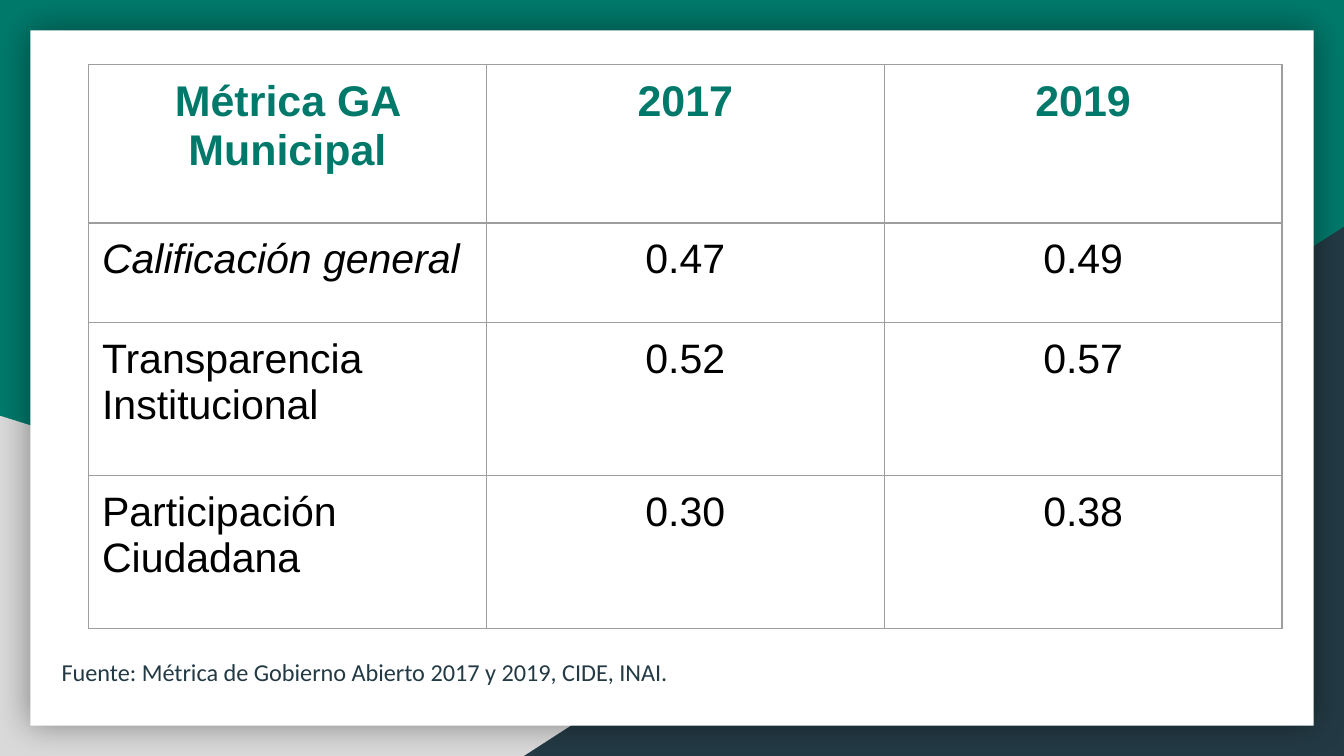
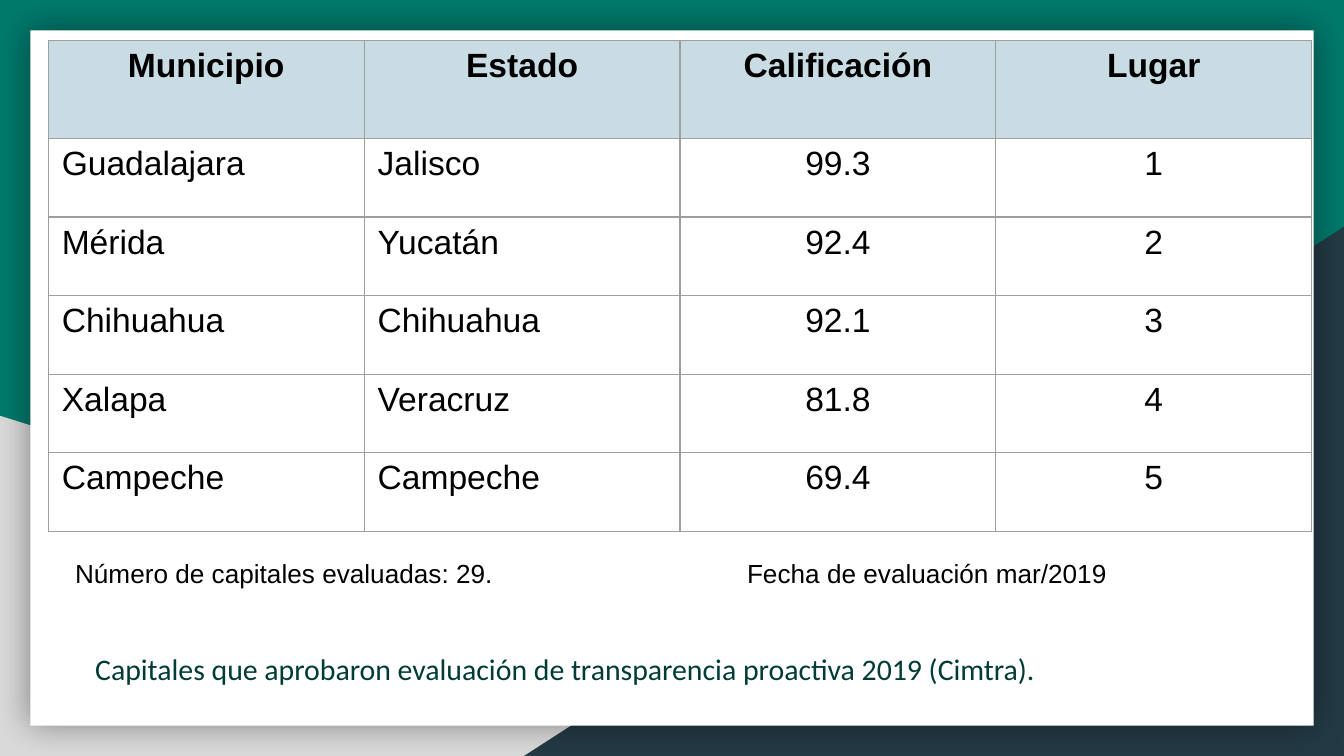
from lxml import etree
from pptx import Presentation
from pptx import util as u
from pptx.dml.color import RGBColor
from pptx.enum import shapes, text
from pptx.oxml import parse_xml
from pptx.oxml.ns import nsdecls, qn

# Shared palette, fonts and page size
GREEN = RGBColor(0x00, 0x79, 0x6B)
DARK_GREEN = RGBColor(0x00, 0x3C, 0x35)
SLATE = RGBColor(0x23, 0x3A, 0x44)
SILVER = RGBColor(0xD9, 0xD9, 0xD9)
PALE_BLUE = RGBColor(0xC9, 0xDB, 0xE3)
GRID_GREY = RGBColor(0x9E, 0x9E, 0x9E)
BLACK = RGBColor(0x00, 0x00, 0x00)
WHITE = RGBColor(0xFF, 0xFF, 0xFF)
TABLE_FONT, CAPTION_FONT = "Arial", "Calibri"
WIDTH = u.Inches(10)
HEIGHT = WIDTH * 9 // 16
PANEL_MARGIN = u.Inches(0.225)
CAPTION_BOX = (0.36, 4.55, 8.11, 0.66)

METRIC_ROWS = [
    ("Métrica GA Municipal", "2017", "2019"),
    ("Calificación general", "0.47", "0.49"),
    ("Transparencia Institucional", "0.52", "0.57"),
    ("Participación Ciudadana", "0.30", "0.38"),
]
CAPITAL_ROWS = [
    ("Municipio", "Estado", "Calificación", "Lugar"),
    ("Guadalajara", "Jalisco", "99.3", "1"),
    ("Mérida", "Yucatán", "92.4", "2"),
    ("Chihuahua", "Chihuahua", "92.1", "3"),
    ("Xalapa", "Veracruz", "81.8", "4"),
    ("Campeche", "Campeche", "69.4", "5"),
]


def style_runs(paragraph, font_name, size, color, bold=False):
    for run in paragraph.runs:
        run.font.name = font_name
        run.font.size = u.Pt(size)
        run.font.color.rgb = color
        run.font.bold = bold


def add_block(slide, kind, left, top, width, height, color):
    block = slide.shapes.add_shape(kind, left, top, width, height)
    block.shadow.inherit = False
    block.fill.solid()
    block.fill.fore_color.rgb = color
    block.line.fill.background()
    return block


def add_corner(slide, width_share, height_share, color, on_right=False):
    """Right triangle standing in a lower corner of the slide."""
    width, height = int(WIDTH * width_share), int(HEIGHT * height_share)
    left = WIDTH - width if on_right else 0
    corner = add_block(slide, shapes.MSO_SHAPE.RIGHT_TRIANGLE,
                       left, HEIGHT - height, width, height, color)
    if on_right:
        corner.element.spPr.find(qn("a:xfrm")).set("flipH", "1")


def add_framed_slide(deck):
    """Blank slide with the green ground, both corners and the white panel."""
    slide = deck.slides.add_slide(deck.slide_layouts[6])
    slide.background.fill.solid()
    slide.background.fill.fore_color.rgb = GREEN
    add_corner(slide, 0.81, 0.45, SILVER)
    add_corner(slide, 0.61, 0.7, SLATE, on_right=True)
    panel = add_block(slide, shapes.MSO_SHAPE.RECTANGLE, PANEL_MARGIN, PANEL_MARGIN,
                      WIDTH - 2 * PANEL_MARGIN, HEIGHT - 2 * PANEL_MARGIN, WHITE)
    effects = panel.element.spPr.find(qn("a:effectLst"))
    effects.append(parse_xml(
        f'<a:outerShdw {nsdecls("a")} blurRad="{u.Pt(18)}" dist="0" algn="ctr" '
        'rotWithShape="0"><a:srgbClr val="000000"><a:alpha val="40000"/>'
        '</a:srgbClr></a:outerShdw>'))
    return slide


def add_text(slide, box, words, font_name, size, color, inset=0.05,
             anchor=text.MSO_ANCHOR.TOP):
    frame = slide.shapes.add_textbox(*map(u.Inches, box)).text_frame
    frame.word_wrap = True
    frame.vertical_anchor = anchor
    frame.margin_left = frame.margin_right = u.Inches(0.1)
    frame.margin_top = frame.margin_bottom = u.Inches(inset)
    frame.text = words
    paragraph = frame.paragraphs[0]
    style_runs(paragraph, font_name, size, color)
    return paragraph


def add_caption(slide, words, size, color):
    return add_text(slide, CAPTION_BOX, words, CAPTION_FONT, size, color,
                    inset=0.1, anchor=text.MSO_ANCHOR.BOTTOM)


def outline_cell(cell):
    properties = cell._tc.get_or_add_tcPr()
    for side in ("lnL", "lnR", "lnT", "lnB"):
        properties.append(parse_xml(
            f'<a:{side} {nsdecls("a")} w="{u.Pt(0.75)}"><a:solidFill>'
            f'<a:srgbClr val="{GRID_GREY}"/></a:solidFill></a:{side}>'))


def add_grid(slide, left, top, column_width, row_heights, rows, label_columns,
             header_size, header_color, body_size, header_fill=None, inset=0.05):
    """Ruled table: bold centred header, left-aligned labels, centred values."""
    columns = len(rows[0])
    table = slide.shapes.add_table(
        len(rows), columns, u.Inches(left), u.Inches(top),
        u.Inches(column_width * columns), u.Inches(sum(row_heights))).table
    table.first_row = table.horz_banding = False
    for column in table.columns:
        column.width = u.Inches(column_width)
    for r, (row, height) in enumerate(zip(rows, row_heights)):
        table.rows[r].height = u.Inches(height)
        header = r == 0
        for c, words in enumerate(row):
            cell = table.cell(r, c)
            outline_cell(cell)
            if header and header_fill is not None:
                cell.fill.solid()
                cell.fill.fore_color.rgb = header_fill
            else:
                cell.fill.background()
            cell.margin_left = cell.margin_right = u.Inches(0.1)
            cell.margin_top = cell.margin_bottom = u.Inches(inset)
            cell.text = words
            paragraph = cell.text_frame.paragraphs[0]
            is_label = not header and c < label_columns
            paragraph.alignment = text.PP_ALIGN.LEFT if is_label else text.PP_ALIGN.CENTER
            style_runs(paragraph, TABLE_FONT, header_size if header else body_size,
                       header_color if header else BLACK, bold=header)
    return table


def build_metric_slide(deck):
    slide = add_framed_slide(deck)
    add_caption(slide, "Fuente: Métrica de Gobierno Abierto 2017 y 2019, CIDE, INAI.",
                13, SLATE)
    metrics = add_grid(slide, 0.66, 0.48, 2.96, [1.18, 0.74, 1.14, 1.14], METRIC_ROWS,
                       label_columns=1, header_size=23, header_color=GREEN,
                       body_size=22, inset=0.1)
    overall_label = metrics.cell(1, 0).text_frame.paragraphs[0]
    overall_label.runs[0].font.italic = True


def build_capitals_slide(deck):
    slide = add_framed_slide(deck)
    caption = add_caption(
        slide, "Capitales que aprobaron evaluación de transparencia proactiva 2019 (Cimtra).",
        16, DARK_GREEN)
    # Hanging indent
    indents = caption._p.get_or_add_pPr()
    indents.set("marL", str(u.Inches(0.5)))
    indents.set("indent", str(-u.Inches(0.25)))

    add_grid(slide, 0.36, 0.3, 2.35, [0.73] + [0.585] * 5, CAPITAL_ROWS,
             label_columns=2, header_size=18, header_color=BLACK, body_size=18,
             header_fill=PALE_BLUE)

    # Count and date on one line, parted by a tab stop
    facts = add_text(slide, (0.46, 4.1, 8.72, 0.57),
                     "Número de capitales evaluadas: 29.\tFecha de evaluación mar/2019",
                     TABLE_FONT, 14, BLACK)
    stops = etree.SubElement(facts._p.get_or_add_pPr(), qn("a:tabLst"))
    etree.SubElement(stops, qn("a:tab"), pos=str(u.Inches(5)), algn="l")


def main():
    deck = Presentation()
    deck.slide_width, deck.slide_height = WIDTH, HEIGHT
    build_metric_slide(deck)
    build_capitals_slide(deck)
    deck.save("out.pptx")


if __name__ == "__main__":
    main()
